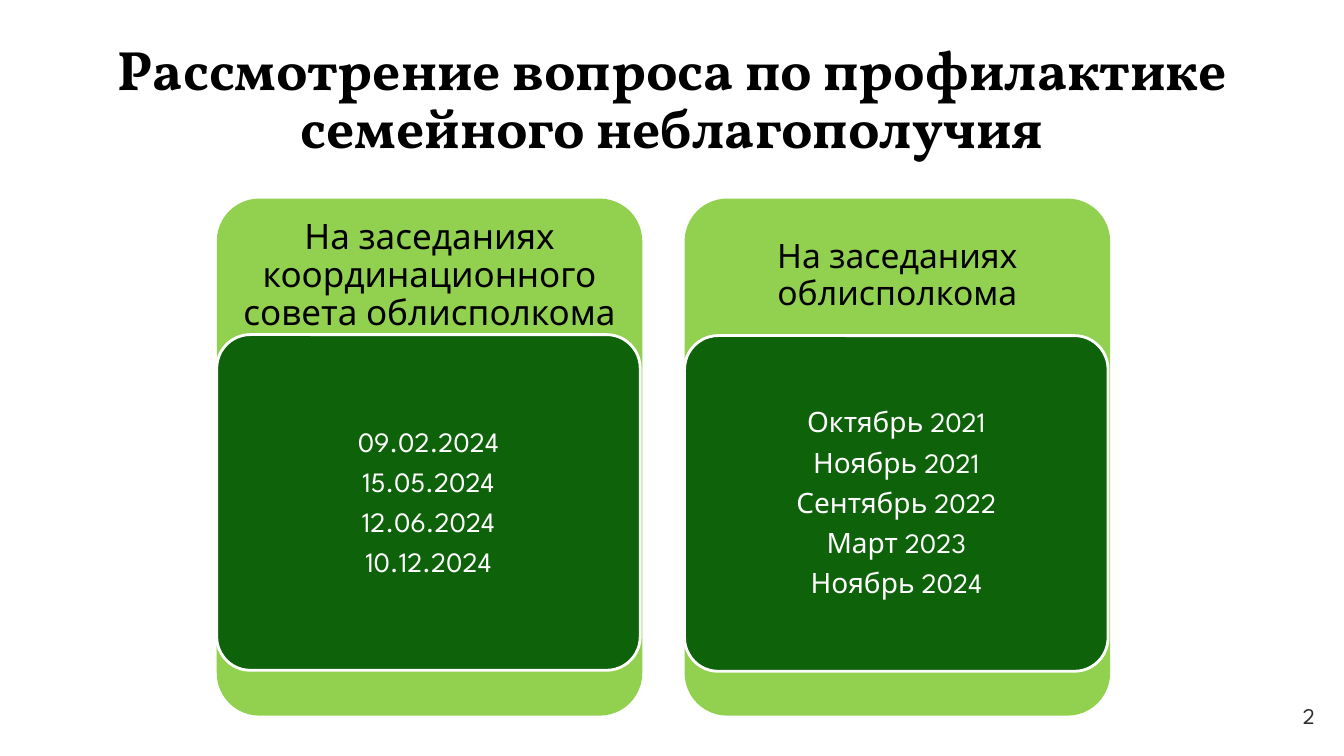
from lxml.etree import SubElement
from pptx import Presentation
from pptx.dml.color import RGBColor
from pptx.enum.shapes import MSO_SHAPE as Shape
from pptx.enum.text import MSO_ANCHOR as Anchor, MSO_AUTO_SIZE as Fit, PP_ALIGN as Align
from pptx.oxml.ns import qn
from pptx.util import Inches, Pt

TITLE = "Рассмотрение вопроса по профилактике семейного неблагополучия"
NUMBER = "2"
# heading, heading size, top of the date card, dates
PANELS = [
    ("На заседаниях координационного совета облисполкома", 25, 3.32,
     ["09.02.2024", "15.05.2024", "12.06.2024", "10.12.2024"]),
    ("На заседаниях облисполкома", 24, 3.33,
     ["Октябрь 2021", "Ноябрь 2021", "Сентябрь 2022", "Март 2023", "Ноябрь 2024"]),
]
COLORS = {"black": "000000", "white": "FFFFFF", "gray": "303030",
          "light": "92D050", "dark": "0E620A"}
HEAD, BODY = "Vollkorn", "League Spartan"
LEFT, TOP, STEP = 2.15, 1.97, 4.64
INSET = 0.1


def color(name):
    return RGBColor.from_string(COLORS[name])


def write(box, lines, size, tint="black", font=BODY, bold=False,
          align=Align.CENTER, pad=(0.1, 0.05), lead=None, after=None):
    """Fill a box with paragraphs; after is the gap in percent of a line."""
    frame = box.text_frame
    frame.word_wrap, frame.auto_size = True, Fit.NONE
    frame.vertical_anchor = Anchor.MIDDLE
    frame.margin_left = frame.margin_right = Inches(pad[0])
    frame.margin_top = frame.margin_bottom = Inches(pad[1])
    for i, line in enumerate(lines):
        para = frame.paragraphs[0] if i == 0 else frame.add_paragraph()
        para.alignment = align
        if lead:
            para.line_spacing = lead
        if after:
            gap = SubElement(para._p.get_or_add_pPr(), qn("a:spcAft"))
            SubElement(gap, qn("a:spcPct")).set("val", str(after * 1000))
        run = para.add_run()
        run.text = line
        run.font.size, run.font.name, run.font.bold = Pt(size), font, bold
        run.font.color.rgb = color(tint)


def card(slide, x, y, w, h, fill, line=None):
    shape = slide.shapes.add_shape(Shape.ROUNDED_RECTANGLE, *map(Inches, (x, y, w, h)))
    shape.adjustments[0] = 0.1
    shape.shadow.inherit = False
    shape.fill.solid()
    shape.fill.fore_color.rgb = color(fill)
    if line:
        shape.line.color.rgb = color(line)
        shape.line.width = Pt(2)
    else:
        shape.line.fill.background()


def textbox(slide, x, y, w, h, lines, size, **look):
    box = slide.shapes.add_textbox(*map(Inches, (x, y, w, h)))
    write(box, lines, size, **look)


def main():
    deck = Presentation()
    deck.slide_width, deck.slide_height = Inches(13.33), Inches(7.5)
    slide = deck.slides.add_slide(deck.slide_layouts[5])

    title = slide.shapes.title
    title.left, title.top = Inches(0.64), Inches(0.57)
    title.width, title.height = Inches(12.05), Inches(0.88)
    write(title, [TITLE], 39.6, font=HEAD, bold=True, lead=0.87)
    textbox(slide, 10.03, 6.9, 3.11, 0.4, [NUMBER], 16, tint="gray", align=Align.RIGHT)

    for i, (head, size, y, dates) in enumerate(PANELS):
        x = LEFT + i * STEP
        card(slide, x, TOP, 4.22, 5.13, "light")
        textbox(slide, x, TOP, 4.22, 1.54, [head], size,
                pad=(0.1, 0.1), lead=0.9, after=35)
        card(slide, x, y, 4.2, 3.33, "dark", line="white")
        textbox(slide, x + INSET, y + INSET, 4, 3.14, dates, 20, tint="white",
                pad=(0.06, 0.04), lead=0.9, after=35)

    deck.save("out.pptx")


if __name__ == "__main__":
    main()
